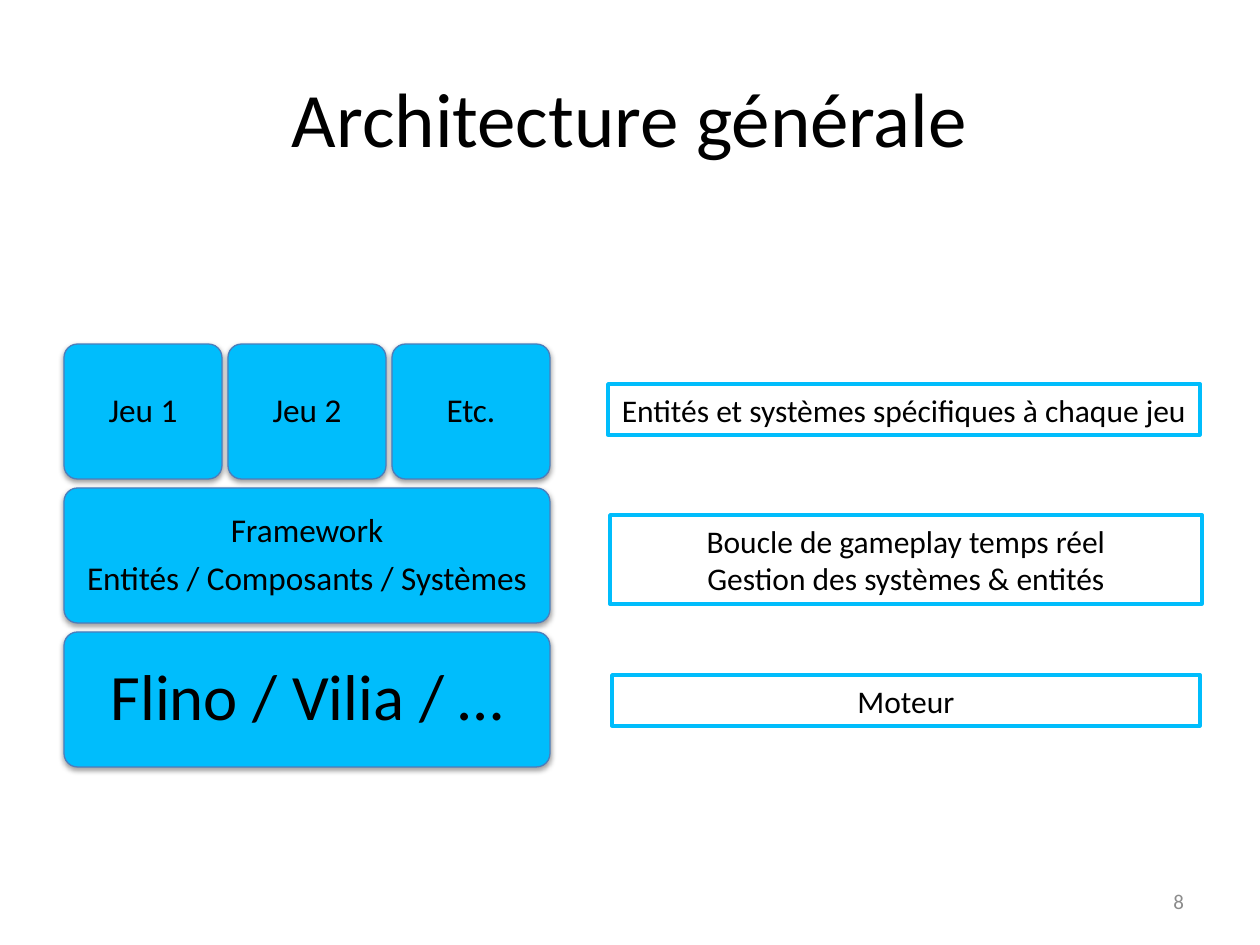
"""Builds a slide showing the general architecture of a game framework."""
from lxml import etree
from pptx import Presentation
from pptx import util as u
from pptx.dml.color import RGBColor
from pptx.enum import shapes, text
from pptx.oxml.ns import qn

SCALE = 914400 / 126


def px(length):
    return u.Emu(round(length * SCALE))


def color(value):
    return RGBColor.from_string(value)


def write(frame, content, size=18, ink="000000", align=text.PP_ALIGN.CENTER,
          inset=(13, 6), leading=None, after=0, font="Calibri"):
    frame.word_wrap = True
    frame.vertical_anchor = text.MSO_ANCHOR.MIDDLE
    frame.margin_left = frame.margin_right = px(inset[0])
    frame.margin_top = frame.margin_bottom = px(inset[1])
    for index, line in enumerate(content.split("\n")):
        para = frame.paragraphs[0] if index == 0 else frame.add_paragraph()
        para.alignment = align
        para.line_spacing = leading
        para.space_after = u.Pt(after)
        span = para.add_run()
        span.text = line
        span.font.name = font
        span.font.size = u.Pt(size)
        span.font.color.rgb = color(ink)


class Sketch:
    accent = "00BDFC"
    edge = "4B7EBC"
    paper = "FFFFFF"

    def __init__(self, slide):
        self.slide = slide

    def label(self, area, content, **style):
        box = self.slide.shapes.add_textbox(*map(px, area))
        write(box.text_frame, content, **style)

    def shape(self, kind, area, fill, line, width):
        box = self.slide.shapes.add_shape(kind, *map(px, area))
        box.shadow.inherit = False
        box.fill.solid()
        box.fill.fore_color.rgb = color(fill)
        box.line.color.rgb = color(line)
        box.line.width = u.Pt(width)
        return box

    def block(self, area, content, size=19, inset=14):
        box = self.shape(shapes.MSO_SHAPE.ROUNDED_RECTANGLE, area,
                         self.accent, self.edge, 0.75)
        box.adjustments[0] = 0.1
        effects = box.element.spPr.find(qn("a:effectLst"))
        shadow = etree.SubElement(effects, qn("a:outerShdw"), blurRad="40000",
                                  dist="20000", dir="5400000", rotWithShape="0")
        shade = etree.SubElement(shadow, qn("a:srgbClr"), val="000000")
        etree.SubElement(shade, qn("a:alpha"), val="38000")
        write(box.text_frame, content, size=size, inset=(inset, inset),
              leading=0.9, after=size * 0.35)

    def note(self, area, content):
        box = self.shape(shapes.MSO_SHAPE.RECTANGLE, area,
                         self.paper, self.accent, 2)
        write(box.text_frame, content)


def main():
    deck = Presentation()
    deck.slide_width, deck.slide_height = px(1260), px(945)
    page = Sketch(deck.slides.add_slide(deck.slide_layouts[6]))

    page.label((63, 38, 1134, 157), "Architecture générale", size=44)

    left, top, height, row_step, column_step = 64, 344, 135, 144, 164
    page.block((left, top + 2 * row_step, 486, height), "Flino / Vilia / …",
               size=37, inset=23)
    page.block((left, top + row_step, 486, height),
               "Framework\nEntités / Composants / Systèmes")
    for column, game in enumerate(("Jeu 1", "Jeu 2", "Etc.")):
        page.block((left + column * column_step, top, 158, height), game)

    page.note((612, 675, 588, 51), "Moteur")
    page.note((610, 515, 592, 89),
              "Boucle de gameplay temps réel\nGestion des systèmes & entités")
    page.note((608, 384, 592, 51), "Entités et systèmes spécifiques à chaque jeu")

    page.label((903, 876, 294, 50), "8", size=12, ink="8C8C8C",
               align=text.PP_ALIGN.RIGHT)
    deck.save("out.pptx")


if __name__ == "__main__":
    main()
